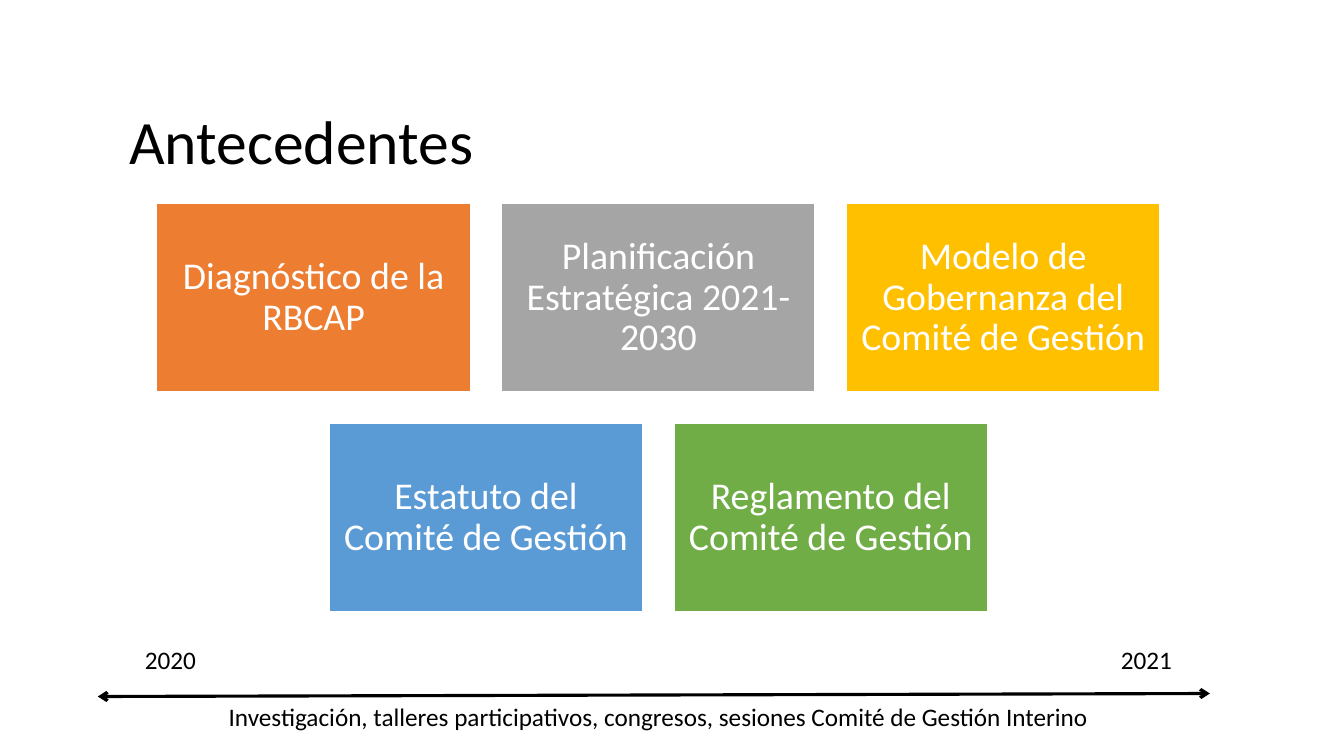
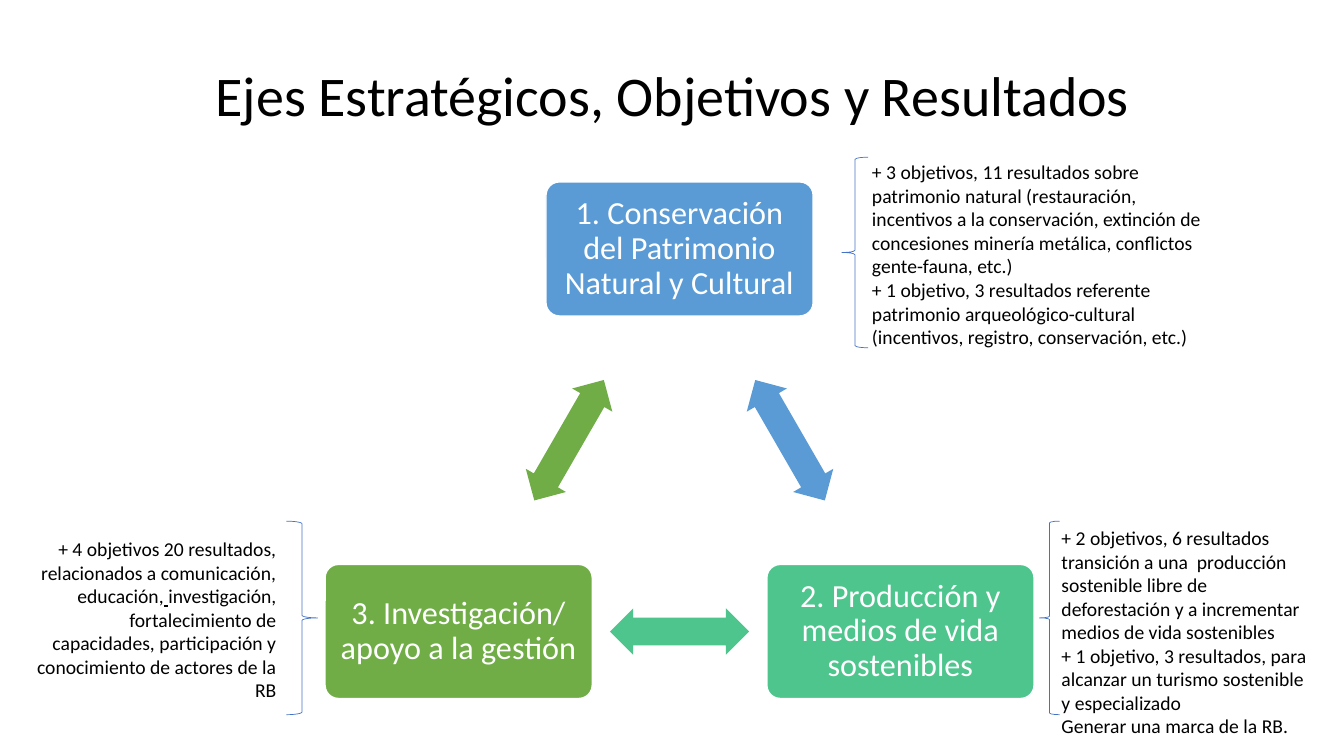
from math import cos, radians, sin

from pptx import Presentation
from pptx.dml import color
from pptx.enum import shapes, text
from pptx.oxml import ns, xmlchemy
from pptx.util import Inches, Pt

# Content
CARD_ROWS = [
    [("Diagnóstico de la RBCAP", "ED7D31"),
     ("Planificación Estratégica 2021-2030", "A5A5A5"),
     ("Modelo de Gobernanza del Comité de Gestión", "FFC000")],
    [("Estatuto del Comité de Gestión", "5B9BD5"),
     ("Reglamento del Comité de Gestión", "70AD47")],
]
TIMELINE_LABELS = [
    ("Investigación, talleres participativos, congresos, sesiones "
     "Comité de Gestión Interino", (1.18, 6.91, 10.7, 0.4)),
    ("2020", (1.24, 6.34, 0.9, 0.4)),
    ("2021", (10.86, 6.34, 1.02, 0.4)),
]
AXES = [
    ("1. Conservación del Patrimonio Natural y Cultural", "5B9BD5"),
    ("2. Producción y medios de vida sostenibles", "4DC58D"),
    ("3. Investigación/ apoyo a la gestión", "70AD47"),
]
LEFT, CENTER, RIGHT = (text.PP_ALIGN.LEFT, text.PP_ALIGN.CENTER,
                       text.PP_ALIGN.RIGHT)
SHAPE = shapes.MSO_SHAPE
# Each paragraph is a list of (text, emphasised) runs
NOTES = [
    dict(box=(8.55, 1.54, 3.58, 1.99), align=LEFT,
         brace=SHAPE.LEFT_BRACE, brace_box=(8.35, 1.56, 0.26, 1.89),
         paras=[
             [("+ 3 objetivos, 11 resultados sobre patrimonio natural "
               "(restauración, incentivos a la conservación, extinción de "
               "concesiones minería metálica, conflictos gente-fauna, etc.)",
               False)],
             [("+ 1 objetivo, 3 resultados referente patrimonio "
               "arqueológico-cultural (incentivos, registro, conservación, "
               "etc.)", False)]]),
    dict(box=(10.43, 5.17, 2.66, 2.22), align=LEFT,
         brace=SHAPE.LEFT_BRACE, brace_box=(10.31, 5.17, 0.2, 1.92),
         paras=[
             [("+ 2 objetivos, 6 resultados transición a una  producción "
               "sostenible libre de deforestación y a incrementar medios de "
               "vida sostenibles", False)],
             [("+ 1 objetivo, 3 resultados, para alcanzar un turismo "
               "sostenible y especializado", False)],
             [("Generar una marca de la RB.", False)]]),
    dict(box=(0.25, 5.28, 2.59, 1.75), align=RIGHT,
         brace=SHAPE.RIGHT_BRACE, brace_box=(2.84, 5.17, 0.31, 1.92),
         paras=[
             [("+ 4 objetivos 20 resultados, relacionados a comunicación, "
               "educación,", False),
              (" ", True),
              ("investigación, fortalecimiento de capacidades, participación "
               "y conocimiento de actores de la RB", False)]]),
]

# Shared style
FONT, BLACK, WHITE, BRACE_BLUE = "Calibri", "000000", "FFFFFF", "4472C4"


def rgb(hex_code):
    return color.RGBColor.from_string(hex_code)


def inches(values):
    return [Inches(v) for v in values]


def write(tf, paras, size, hex_code, align, spacing=None):
    tf.word_wrap = True
    for i, runs in enumerate(paras):
        p = tf.add_paragraph() if i else tf.paragraphs[0]
        p.alignment = align
        if spacing:
            p.line_spacing = spacing
        for content, emphasised in runs:
            r = p.add_run()
            r.text = content
            r.font.name, r.font.size = FONT, Pt(size)
            r.font.color.rgb = rgb(hex_code)
            if emphasised:
                r.font.bold = r.font.underline = True


def new_slide(title, box, size, align):
    s = prs.slides.add_slide(prs.slide_layouts[5])
    sp = s.shapes.title
    sp.left, sp.top, sp.width, sp.height = inches(box)
    tf = sp.text_frame
    tf.auto_size = text.MSO_AUTO_SIZE.NONE
    tf.vertical_anchor = text.MSO_ANCHOR.MIDDLE
    write(tf, [[(title, False)]], size, BLACK, align, 0.9)
    return s


def add_shape(s, kind, box, fill=None, line=None, width=1):
    sp = s.shapes.add_shape(kind, *inches(box))
    sp.shadow.inherit = False
    if fill:
        sp.fill.solid()
        sp.fill.fore_color.rgb = rgb(fill)
    else:
        sp.fill.background()
    if line:
        sp.line.color.rgb = rgb(line)
        sp.line.width = Pt(width)
    else:
        sp.line.fill.background()
    return sp


def add_card(s, kind, box, label, fill, size, inset):
    sp = add_shape(s, kind, box, fill, WHITE)
    tf = sp.text_frame
    tf.margin_left = tf.margin_right = Inches(inset)
    tf.margin_top = tf.margin_bottom = Inches(inset)
    tf.vertical_anchor = text.MSO_ANCHOR.MIDDLE
    write(tf, [[(label, False)]], size, WHITE, CENTER, 0.9)
    return sp


def add_text(s, box, paras, size, align):
    tf = s.shapes.add_textbox(*inches(box)).text_frame
    write(tf, paras, size, BLACK, align)
    tf.auto_size = text.MSO_AUTO_SIZE.SHAPE_TO_FIT_TEXT


def add_double_arrow(s, start, end, width):
    c = s.shapes.add_connector(shapes.MSO_CONNECTOR.STRAIGHT,
                               *inches(start + end))
    c.line.color.rgb = rgb(BLACK)
    c.line.width = Pt(width)
    ln = c.line._get_or_add_ln()
    for tag in ("a:headEnd", "a:tailEnd"):
        end_mark = xmlchemy.OxmlElement(tag)
        end_mark.set("type", "arrow")
        ln.append(end_mark)
    c._element.find(ns.qn("p:spPr")).append(
        xmlchemy.OxmlElement("a:effectLst"))


def build_background():
    s = new_slide("Antecedentes", (1.18, 0.89, 11.5, 1.08), 44, LEFT)
    # Cards: each row is centred on the same axis
    card_w, card_h, gap, center_x, top = 3.11, 1.87, 0.31, 6.53, 2.02
    for row, cards in enumerate(CARD_ROWS):
        row_w = len(cards) * (card_w + gap) - gap
        y = top + row * (card_h + gap)
        for col, (label, fill) in enumerate(cards):
            x = center_x - row_w / 2 + col * (card_w + gap)
            add_card(s, SHAPE.RECTANGLE, (x, y, card_w, card_h),
                     label, fill, 27, 0.11)
    # Timeline
    add_double_arrow(s, (0.97, 6.91), (12, 6.88), 2.25)
    for label, box in TIMELINE_LABELS:
        add_text(s, box, [[(label, False)]], 18, CENTER)


def build_axes():
    s = new_slide("Ejes Estratégicos, Objetivos y Resultados",
                  (0.92, 0.5, 11.5, 0.96), 40, CENTER)
    # Cycle: axes on a circle, an arrow halfway between neighbours
    cx, cy, radius = 6.74, 5, 2.53
    node_w, node_h, arrow_w, arrow_h = 2.65, 1.33, 1.38, 0.46
    step = 360 / len(AXES)
    for i, (label, fill) in enumerate(AXES):
        angle = radians(i * step - 90)
        x, y = cx + radius * cos(angle), cy + radius * sin(angle)
        node = add_card(s, SHAPE.ROUNDED_RECTANGLE,
                        (x - node_w / 2, y - node_h / 2, node_w, node_h),
                        label, fill, 23, 0.1)
        node.adjustments[0] = 0.1

        mid = radians((i + 0.5) * step - 90)
        reach = radius * cos(radians(step / 2))
        x, y = cx + reach * cos(mid), cy + reach * sin(mid)
        arrow = add_shape(s, SHAPE.LEFT_RIGHT_ARROW,
                          (x - arrow_w / 2, y - arrow_h / 2, arrow_w, arrow_h),
                          fill)
        arrow.adjustments[0], arrow.adjustments[1] = 0.6, 0.5
        arrow.rotation = (i + 0.5) * step
    # Notes with their braces
    for note in NOTES:
        add_text(s, note["box"], note["paras"], 14, note["align"])
        add_shape(s, note["brace"], note["brace_box"],
                  line=BRACE_BLUE, width=0.5)


prs = Presentation()
prs.slide_width, prs.slide_height = inches((13.33, 7.5))
build_background()
build_axes()
prs.save("out.pptx")
